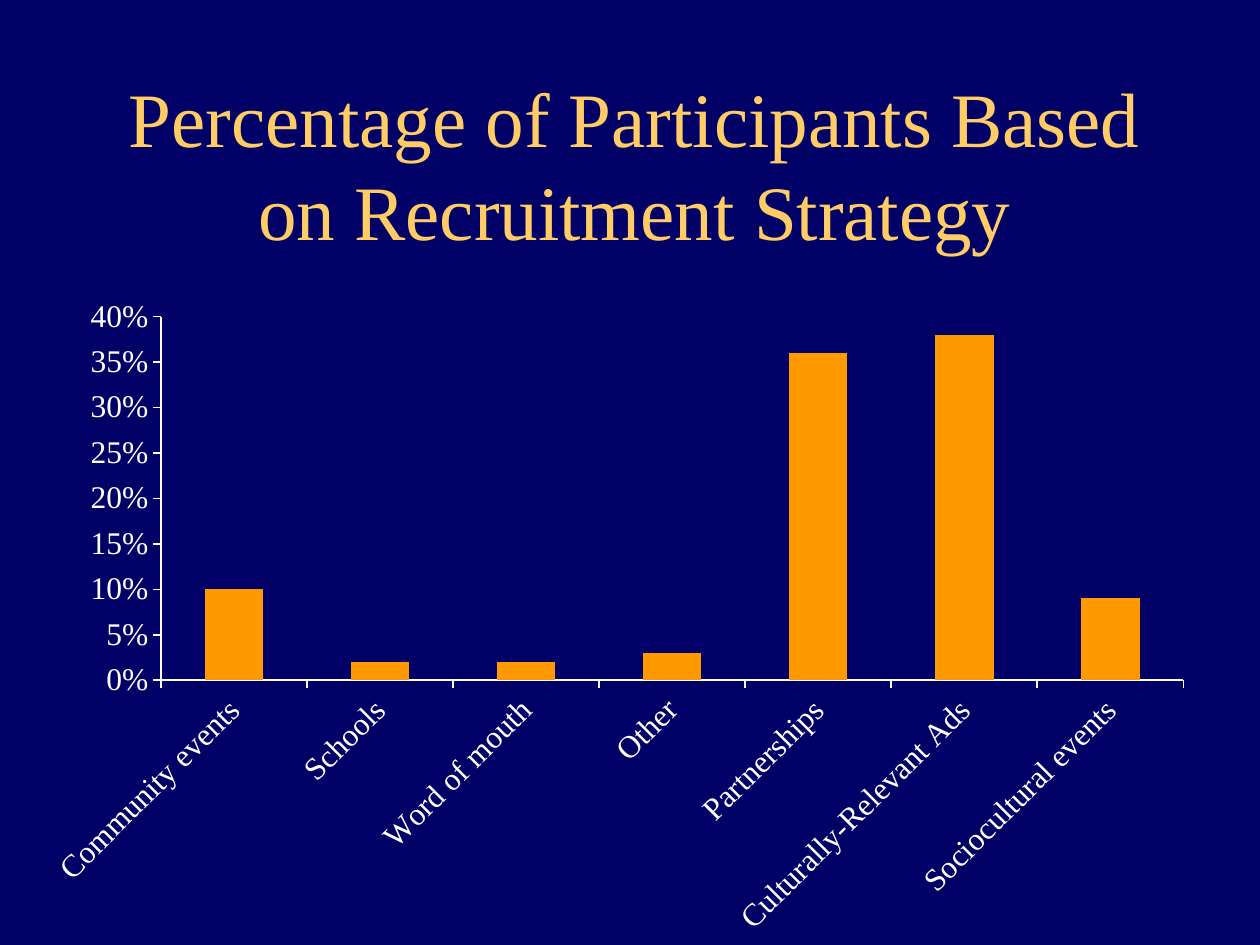
from dataclasses import dataclass

from lxml import etree
from pptx import Presentation
from pptx.chart.data import CategoryChartData
from pptx.dml.color import RGBColor
from pptx.enum.chart import XL_CHART_TYPE, XL_TICK_MARK
from pptx.enum.text import MSO_ANCHOR, PP_ALIGN
from pptx.util import Inches, Pt

COLUMN = XL_CHART_TYPE.COLUMN_CLUSTERED
OUTSIDE, NONE = XL_TICK_MARK.OUTSIDE, XL_TICK_MARK.NONE
MIDDLE, CENTER = MSO_ANCHOR.MIDDLE, PP_ALIGN.CENTER
FONT = "Times New Roman"
COLORS = {"back": "000066", "title": "FFCC66", "text": "FFFFFF", "bar": "FF9900"}


@dataclass
class Box:
    left: float
    top: float
    width: float
    height: float

    def lengths(self) -> list:
        return [Inches(n) for n in (self.left, self.top, self.width, self.height)]


@dataclass
class Source:
    name: str
    share: float


TITLE = Box(0.58, 0.67, 8.92, 1.25)
CHART = Box(0.25, 2.25, 9.33, 5.25)
PLOT = {"x": 0.11, "y": 0.05, "w": 0.87, "h": 0.55}  # shares of the chart frame
SOURCES = [
    Source("Community events", 0.10),
    Source("Schools", 0.02),
    Source("Word of mouth", 0.02),
    Source("Other", 0.03),
    Source("Partnerships", 0.36),
    Source("Culturally-Relevant Ads", 0.38),
    Source("Sociocultural events", 0.09),
]


def color(key: str) -> RGBColor:
    return RGBColor.from_string(COLORS[key])


def style(font, size: float, key: str) -> None:
    font.name, font.size, font.bold = FONT, Pt(size), False
    font.color.rgb = color(key)


def add_text(slide, box: Box, text: str, *, size: float, key: str,
             align=CENTER, anchor=MIDDLE) -> None:
    frame = slide.shapes.add_textbox(*box.lengths()).text_frame
    frame.word_wrap = True
    frame.vertical_anchor = anchor
    para = frame.paragraphs[0]
    para.alignment = align
    run = para.add_run()
    run.text = text
    style(run.font, size, key)


def set_plot(chart, parts: dict) -> None:
    """Fix the inner plot area, which python-pptx cannot place."""
    area = chart.plots[0]._element.getparent()
    space = etree.QName(area).namespace
    for old in area.findall(f"{{{space}}}layout"):
        area.remove(old)
    layout = etree.Element(f"{{{space}}}layout")
    area.insert(0, layout)
    manual = etree.SubElement(layout, f"{{{space}}}manualLayout")
    marks = {"layoutTarget": "inner", "xMode": "edge", "yMode": "edge", **parts}
    for tag, value in marks.items():
        etree.SubElement(manual, f"{{{space}}}{tag}").set("val", str(value))


def add_chart(slide, box: Box, sources: list[Source]) -> None:
    data = CategoryChartData(number_format="0%")
    data.categories = [item.name for item in sources]
    data.add_series("Series 1", [item.share for item in sources])
    chart = slide.shapes.add_chart(COLUMN, *box.lengths(), data).chart
    chart.has_legend = chart.has_title = False
    style(chart.font, 18, "text")

    # Bars
    plot = chart.plots[0]
    plot.vary_by_categories = False
    plot.gap_width = 150
    fill = plot.series[0].format.fill
    fill.solid()
    fill.fore_color.rgb = color("bar")

    # Axes
    for axis in (chart.category_axis, chart.value_axis):
        axis.has_major_gridlines = False
        axis.major_tick_mark, axis.minor_tick_mark = OUTSIDE, NONE
        axis.format.line.color.rgb = color("text")
        axis.format.line.width = Pt(1)
        style(axis.tick_labels.font, 18, "text")
    names, scale = chart.category_axis, chart.value_axis
    names._element.txPr.bodyPr.set("rot", str(-45 * 60000))
    scale.minimum_scale, scale.maximum_scale, scale.major_unit = 0, 0.4, 0.05
    scale.tick_labels.number_format = "0%"
    scale.tick_labels.number_format_is_linked = False
    set_plot(chart, PLOT)


def main() -> None:
    deck = Presentation()
    deck.slide_width, deck.slide_height = Inches(10), Inches(7.5)
    slide = deck.slides.add_slide(deck.slide_layouts[6])
    back = slide.background.fill
    back.solid()
    back.fore_color.rgb = color("back")

    add_text(slide, TITLE, "Percentage of Participants Based on Recruitment Strategy",
             size=44, key="title")
    add_chart(slide, CHART, SOURCES)
    deck.save("out.pptx")


if __name__ == "__main__":
    main()
